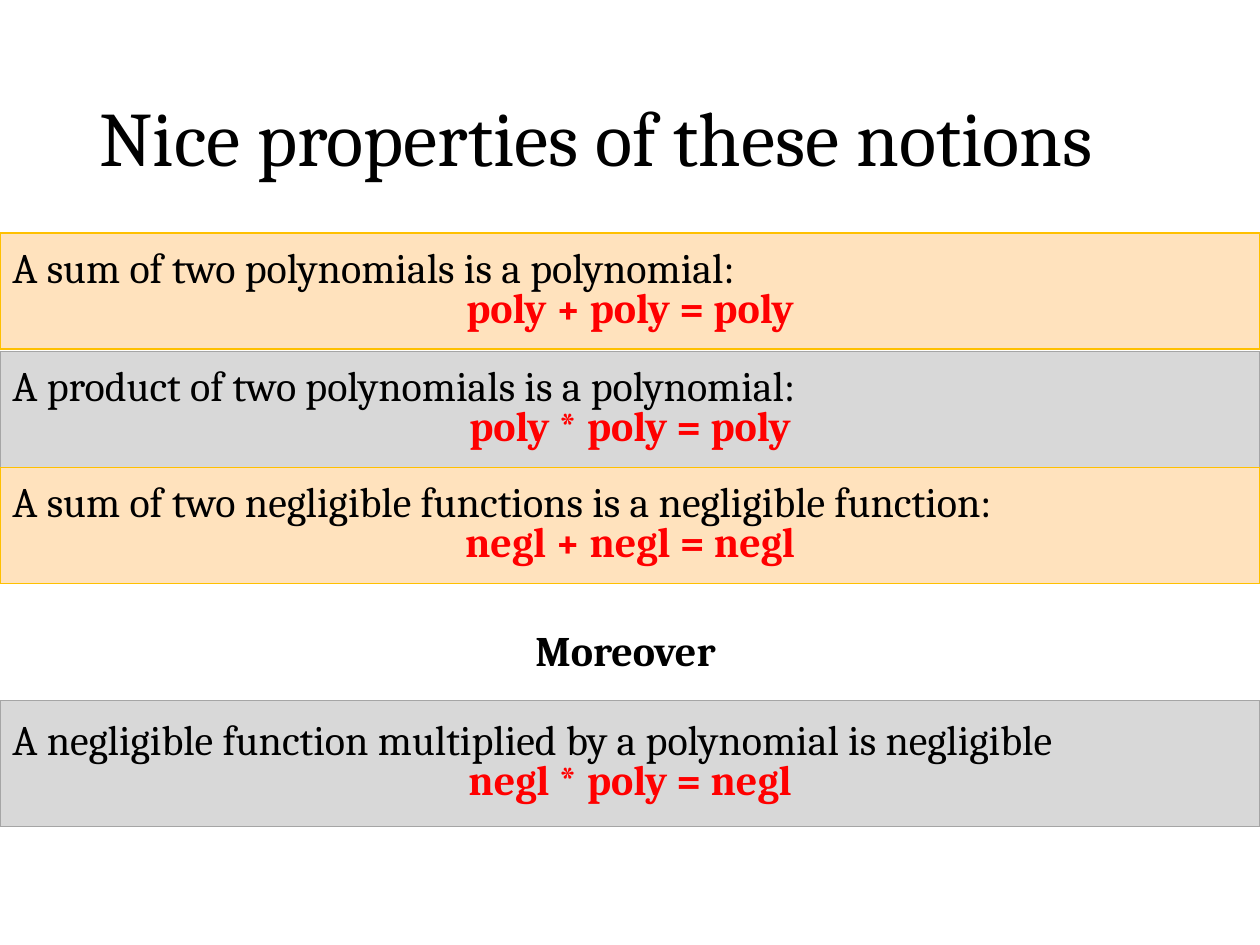
from dataclasses import dataclass

from pptx import Presentation
from pptx.dml.color import RGBColor as Rgb
from pptx.enum.shapes import MSO_SHAPE as Shape
from pptx.enum.text import MSO_ANCHOR as Anchor, PP_ALIGN as Align
from pptx.util import Inches, Pt


@dataclass(frozen=True)
class Theme:
    font: str = "Cambria"
    title_size: int = 44
    body_size: int = 24
    line_width: float = 0.79
    text: str = "000000"
    formula: str = "FF0000"
    orange: tuple = ("FFE2BD", "FFC000")  # fill, outline
    gray: tuple = ("D8D8D8", "A5A5A5")


THEME = Theme()
WIDTH, HEIGHT = 10, 7.5

# Top, height, colours, statement and formula of each band
BANDS = [
    (1.85, 0.92, THEME.orange, "A sum of two polynomials is a polynomial:", "poly + poly = poly"),
    (2.79, 0.92, THEME.gray, "A product of two polynomials is a polynomial:", "poly * poly = poly"),
    (3.71, 0.92, THEME.orange, "A sum of two negligible functions is a negligible function:",
     "negl + negl = negl"),
    (5.56, 1, THEME.gray, "A negligible function multiplied by a polynomial is negligible",
     "negl * poly = negl"),
]


def write(paragraph, text, size=THEME.body_size, color=THEME.text, bold=False,
          align=Align.LEFT, spacing=1.0):
    paragraph.alignment = align
    paragraph.line_spacing = spacing
    run = paragraph.add_run()
    run.text = text
    run.font.name = THEME.font
    run.font.size = Pt(size)
    run.font.bold = bold
    run.font.color.rgb = Rgb.from_string(color)


def add_label(slide, box, text, anchor=Anchor.TOP, **text_format):
    frame = slide.shapes.add_textbox(*map(Inches, box)).text_frame
    frame.word_wrap = True
    frame.vertical_anchor = anchor
    write(frame.paragraphs[0], text, **text_format)


def add_band(slide, box, colors, statement, formula):
    fill, outline = map(Rgb.from_string, colors)
    band = slide.shapes.add_shape(Shape.RECTANGLE, *map(Inches, box))
    band.shadow.inherit = False
    band.fill.solid()
    band.fill.fore_color.rgb = fill
    band.line.color.rgb = outline
    band.line.width = Pt(THEME.line_width)
    frame = band.text_frame
    frame.word_wrap = True
    frame.vertical_anchor = Anchor.MIDDLE
    write(frame.paragraphs[0], statement, spacing=0.8)
    write(frame.add_paragraph(), formula, color=THEME.formula, bold=True,
          align=Align.CENTER, spacing=0.8)


def main():
    presentation = Presentation()
    presentation.slide_width = Inches(WIDTH)
    presentation.slide_height = Inches(HEIGHT)
    slide = presentation.slides.add_slide(presentation.slide_layouts[6])

    # Title
    add_label(slide, (0.69, 0.4, 8.62, 1.45), "Nice properties of these notions",
              anchor=Anchor.MIDDLE, size=THEME.title_size, spacing=0.9)
    # Full-width bands, one for each property
    for top, height, colors, statement, formula in BANDS:
        add_band(slide, (0, top, WIDTH, height), colors, statement, formula)
    # Heading above the last band
    add_label(slide, (4.15, 4.91, 1.69, 0.5), "Moreover", bold=True)

    presentation.save("out.pptx")


if __name__ == "__main__":
    main()
